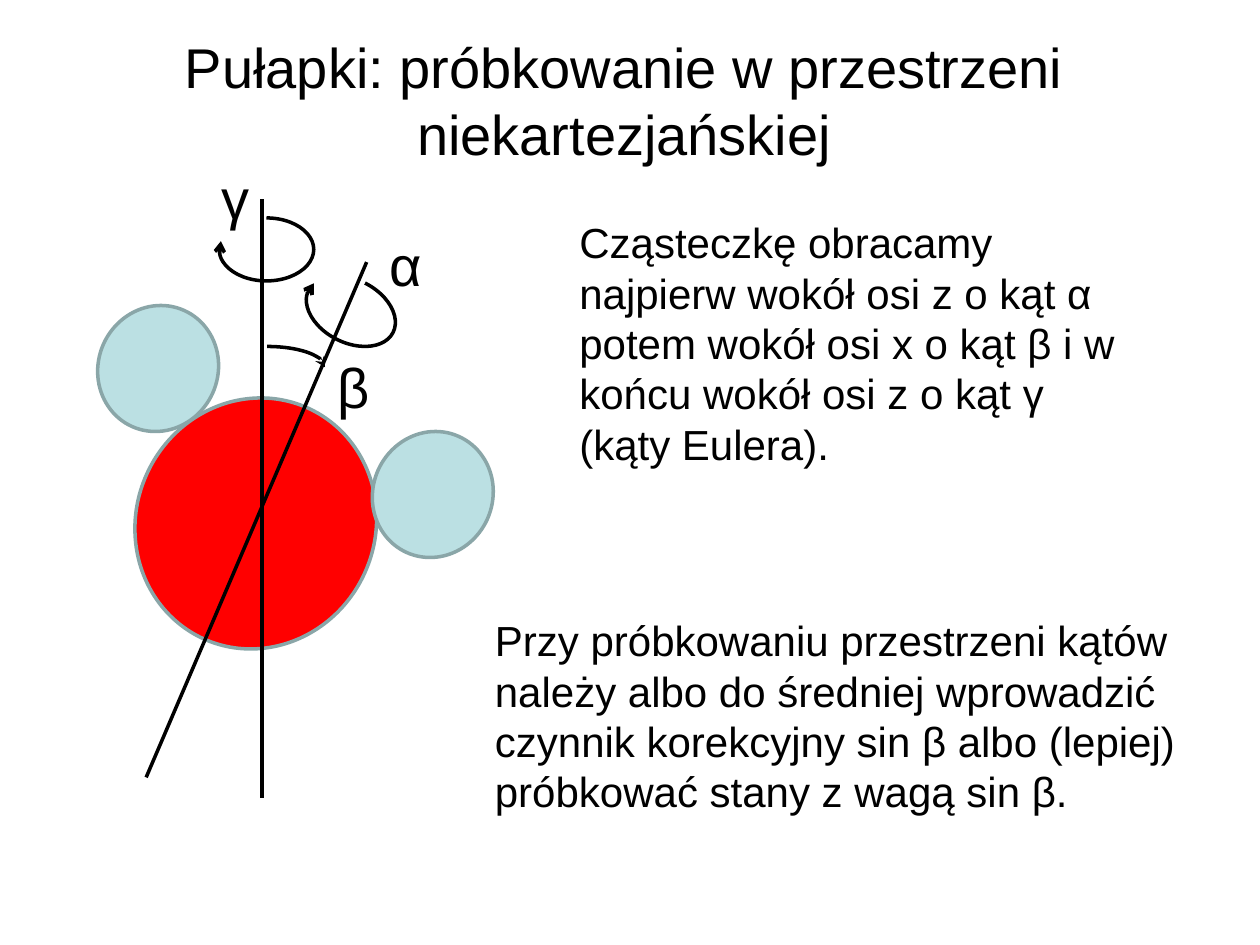
"""Build a slide on sampling molecular orientations with Euler angles."""
from typing import NamedTuple

from lxml.etree import SubElement
from pptx import Presentation
from pptx.dml.color import RGBColor
from pptx.enum.shapes import MSO_CONNECTOR as Connector, MSO_SHAPE as Preset
from pptx.enum.text import MSO_ANCHOR as Anchor, MSO_AUTO_SIZE as AutoSize, PP_ALIGN as Align
from pptx.oxml.ns import qn
from pptx.util import Inches, Pt

BLACK = RGBColor(0x00, 0x00, 0x00)
RED = RGBColor(0xFF, 0x00, 0x00)
PALE_BLUE = RGBColor(0xBB, 0xE0, 0xE3)
GREY_BLUE = RGBColor(0x8A, 0xA6, 0xA8)
FONT = "Arial"
LINE_WIDTH = Pt(2)
FULL_TURN = (162, 114.183)
QUARTER_TURN = (162, 0)


class Box(NamedTuple):
    left: float
    top: float
    width: float
    height: float

    def lengths(self) -> list:
        return [Inches(value) for value in self]


class Atom(NamedTuple):
    box: Box
    color: RGBColor


class Axis(NamedTuple):
    start: tuple
    end: tuple


class Turn(NamedTuple):
    box: Box
    tilt: float
    angles: tuple
    arrowhead: str


class Caption(NamedTuple):
    box: Box
    text: str
    size: int


ATOM_TILT = 24
ATOMS = [
    Atom(Box(1.08, 3.15, 1.9, 2.01), RED),
    Atom(Box(2.96, 3.42, 0.95, 1.01), PALE_BLUE),
    Atom(Box(0.78, 2.42, 0.95, 1.01), PALE_BLUE),
]
AXES = [
    Axis((2.91, 2.08), (1.16, 6.17)),
    Axis((2.08, 1.58), (2.08, 6.33)),
]
TURNS = [
    Turn(Box(2.41, 2.22, 0.75, 0.5), 26.7, FULL_TURN, "arrow"),
    Turn(Box(1.74, 1.73, 0.75, 0.5), 0, FULL_TURN, "arrow"),
    Turn(Box(1.66, 2.75, 0.92, 0.33), 0, QUARTER_TURN, "stealth"),
]
CAPTIONS = [
    Caption(Box(2.99, 1.78, 0.67, 0.64), "α", 32),
    Caption(Box(1.66, 1.25, 0.67, 0.64), "γ", 32),
    Caption(Box(2.58, 2.75, 0.67, 0.64), "β", 32),
    Caption(
        Box(4.5, 1.67, 4.5, 2.12),
        "Cząsteczkę obracamy najpierw wokół osi z o kąt α potem wokół osi x "
        "o kąt β i w końcu wokół osi z o kąt γ (kąty Eulera).",
        24,
    ),
    Caption(
        Box(3.83, 4.83, 5.83, 1.72),
        "Przy próbkowaniu przestrzeni kątów należy albo do średniej wprowadzić "
        "czynnik korekcyjny sin β albo (lepiej) próbkować stany z wagą sin β.",
        24,
    ),
]


def style_line(line, color: RGBColor) -> None:
    line.color.rgb = color
    line.width = LINE_WIDTH


def write(paragraph, text: str, size: int) -> None:
    run = paragraph.add_run()
    run.text = text
    run.font.name = FONT
    run.font.size = Pt(size)
    run.font.color.rgb = BLACK


def place_title(title, box: Box, text: str) -> None:
    title.left, title.top, title.width, title.height = box.lengths()
    title.text_frame.vertical_anchor = Anchor.MIDDLE
    paragraph = title.text_frame.paragraphs[0]
    paragraph.alignment = Align.CENTER
    write(paragraph, text, 32)


def draw_atom(shapes, atom: Atom) -> None:
    ball = shapes.add_shape(Preset.OVAL, *atom.box.lengths())
    ball.rotation = ATOM_TILT
    ball.shadow.inherit = False
    ball.fill.solid()
    ball.fill.fore_color.rgb = atom.color
    style_line(ball.line, GREY_BLUE)


def draw_axis(shapes, axis: Axis) -> None:
    ends = [Inches(value) for value in axis.start + axis.end]
    rod = shapes.add_connector(Connector.STRAIGHT, *ends)
    style_line(rod.line, BLACK)
    SubElement(rod._element.spPr, qn("a:effectLst"))


def draw_turn(shapes, turn: Turn) -> None:
    arc = shapes.add_shape(Preset.ARC, *turn.box.lengths())
    arc.rotation = turn.tilt
    arc.adjustments[0], arc.adjustments[1] = turn.angles
    arc.shadow.inherit = False
    arc.fill.background()
    style_line(arc.line, BLACK)
    SubElement(arc.line._get_or_add_ln(), qn("a:tailEnd"), type=turn.arrowhead)


def draw_caption(shapes, caption: Caption) -> None:
    frame = shapes.add_textbox(*caption.box.lengths()).text_frame
    frame.word_wrap = True
    frame.auto_size = AutoSize.SHAPE_TO_FIT_TEXT
    write(frame.paragraphs[0], caption.text, caption.size)


def main() -> None:
    deck = Presentation()
    deck.slide_width, deck.slide_height = Inches(10), Inches(7.5)
    shapes = deck.slides.add_slide(deck.slide_layouts[5]).shapes
    place_title(
        shapes.title,
        Box(0.33, 0.25, 9.25, 1.08),
        "Pułapki: próbkowanie w przestrzeni niekartezjańskiej",
    )
    molecule = shapes.add_group_shape()
    for atom in ATOMS:
        draw_atom(molecule.shapes, atom)
    for axis in AXES:
        draw_axis(shapes, axis)
    for turn in TURNS:
        draw_turn(shapes, turn)
    for caption in CAPTIONS:
        draw_caption(shapes, caption)
    deck.save("out.pptx")


if __name__ == "__main__":
    main()
